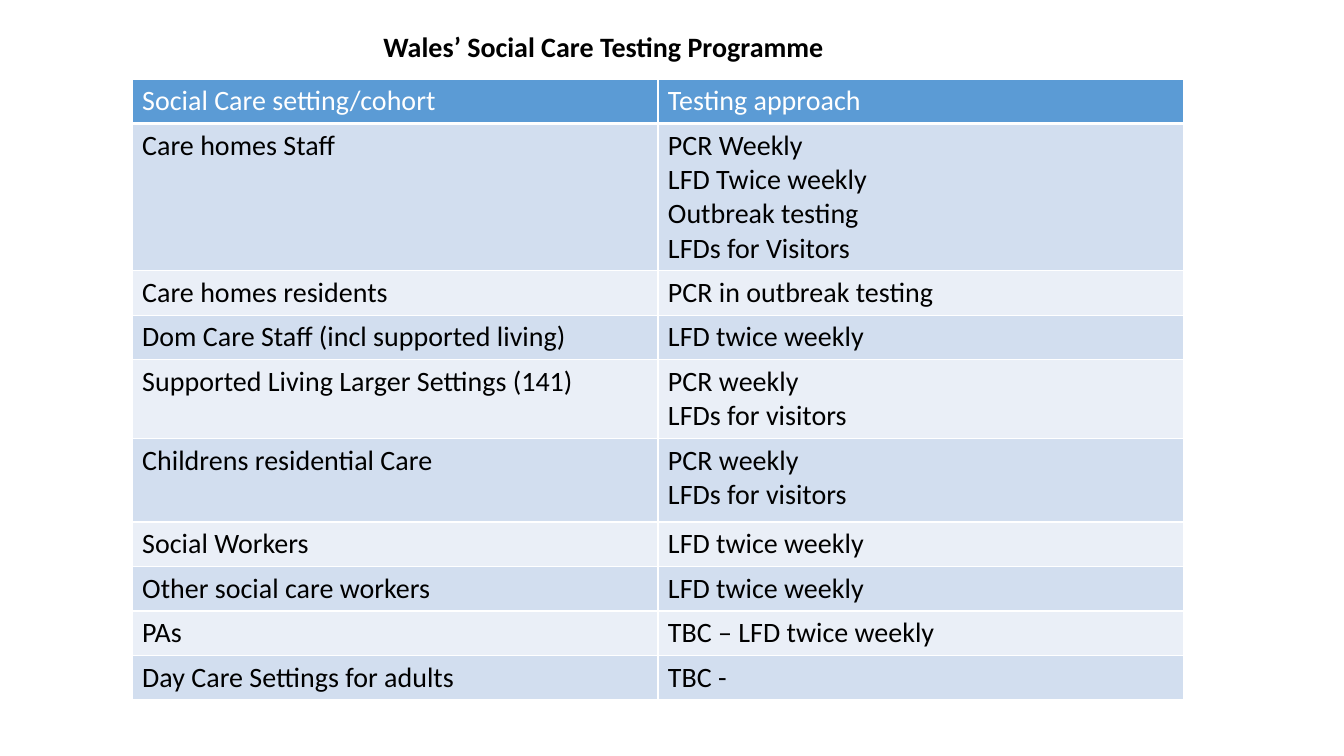
"""Build the slide on the social care testing programme in Wales."""
from dataclasses import dataclass

from lxml.etree import SubElement
from pptx import Presentation
from pptx.dml.color import RGBColor
from pptx.enum.text import MSO_AUTO_SIZE, PP_ALIGN
from pptx.oxml.ns import qn
from pptx.util import Cm, Pt

HEADING = "Wales’ Social Care Testing Programme"
COLUMNS = ("Social Care setting/cohort", "Testing approach")
APPROACHES = [
    ("Care homes Staff", "PCR Weekly\nLFD Twice weekly\nOutbreak testing\nLFDs for Visitors"),
    ("Care homes residents", "PCR in outbreak testing"),
    ("Dom Care Staff (incl supported living)", "LFD twice weekly"),
    ("Supported Living Larger Settings (141)", "PCR weekly\nLFDs for visitors"),
    ("Childrens residential Care", "PCR weekly\nLFDs for visitors"),
    ("Social Workers", "LFD twice weekly"),
    ("Other social care workers", "LFD twice weekly"),
    ("PAs", "TBC – LFD twice weekly"),
    ("Day Care Settings for adults", "TBC -"),
]
TALLER_ROWS = {"Childrens residential Care": 2.11}


@dataclass(frozen=True)
class Theme:
    font: str = "Calibri"
    size: int = 20
    ink: str = "000000"
    white: str = "FFFFFF"
    header: str = "5B9BD5"
    bands: tuple = ("D2DEEF", "EAEFF7")
    rule: int = 1
    header_rule: int = 3


THEME = Theme()


def write(frame, text, *, color=THEME.ink, bold=False, align=PP_ALIGN.LEFT):
    """Fill a text frame, one paragraph for each line of text."""
    frame.text = text
    for paragraph in frame.paragraphs:
        paragraph.alignment = align
        font = paragraph.runs[0].font
        font.name, font.size, font.bold = THEME.font, Pt(THEME.size), bold
        font.color.rgb = RGBColor.from_string(color)


def draw_borders(cell, bottom):
    """Draw white rules on the four sides of a cell."""
    properties = cell._tc.get_or_add_tcPr()
    for side in "LRTB":
        width = bottom if side == "B" else THEME.rule
        line = SubElement(properties, qn(f"a:ln{side}"), w=str(Pt(width)))
        SubElement(SubElement(line, qn("a:solidFill")), qn("a:srgbClr"), val=THEME.white)


def row_height(setting, approach):
    """Give the height for the lines in a row."""
    return Cm(TALLER_ROWS.get(setting, 1.12 + 0.83 * approach.count("\n")))


def add_heading(slide):
    """Place the centred heading."""
    heading = slide.shapes.add_textbox(Cm(3.78), Cm(0.61), Cm(22.86), Cm(1.11))
    heading.text_frame.word_wrap = True
    heading.text_frame.auto_size = MSO_AUTO_SIZE.SHAPE_TO_FIT_TEXT
    write(heading.text_frame, HEADING, bold=True, align=PP_ALIGN.CENTER)


def add_approaches(slide):
    """Place the table of settings and testing approaches."""
    rows = [COLUMNS, *APPROACHES]
    heights = [row_height(*row) for row in rows]
    table = slide.shapes.add_table(
        len(rows), len(COLUMNS), Cm(3.33), Cm(1.99), Cm(26.5), sum(heights)
    ).table
    for index, (row, height) in enumerate(zip(rows, heights)):
        table.rows[index].height = height
        is_header = index == 0
        fill = THEME.header if is_header else THEME.bands[(index - 1) % 2]
        for column, text in enumerate(row):
            cell = table.cell(index, column)
            write(cell.text_frame, text, color=THEME.white if is_header else THEME.ink)
            draw_borders(cell, THEME.header_rule if is_header else THEME.rule)
            cell.fill.solid()
            cell.fill.fore_color.rgb = RGBColor.from_string(fill)


def main():
    """Build and save the slide."""
    presentation = Presentation()
    presentation.slide_width, presentation.slide_height = Cm(33.87), Cm(19.05)
    slide = presentation.slides.add_slide(presentation.slide_layouts[6])
    add_approaches(slide)
    add_heading(slide)
    presentation.save("out.pptx")


if __name__ == "__main__":
    main()
